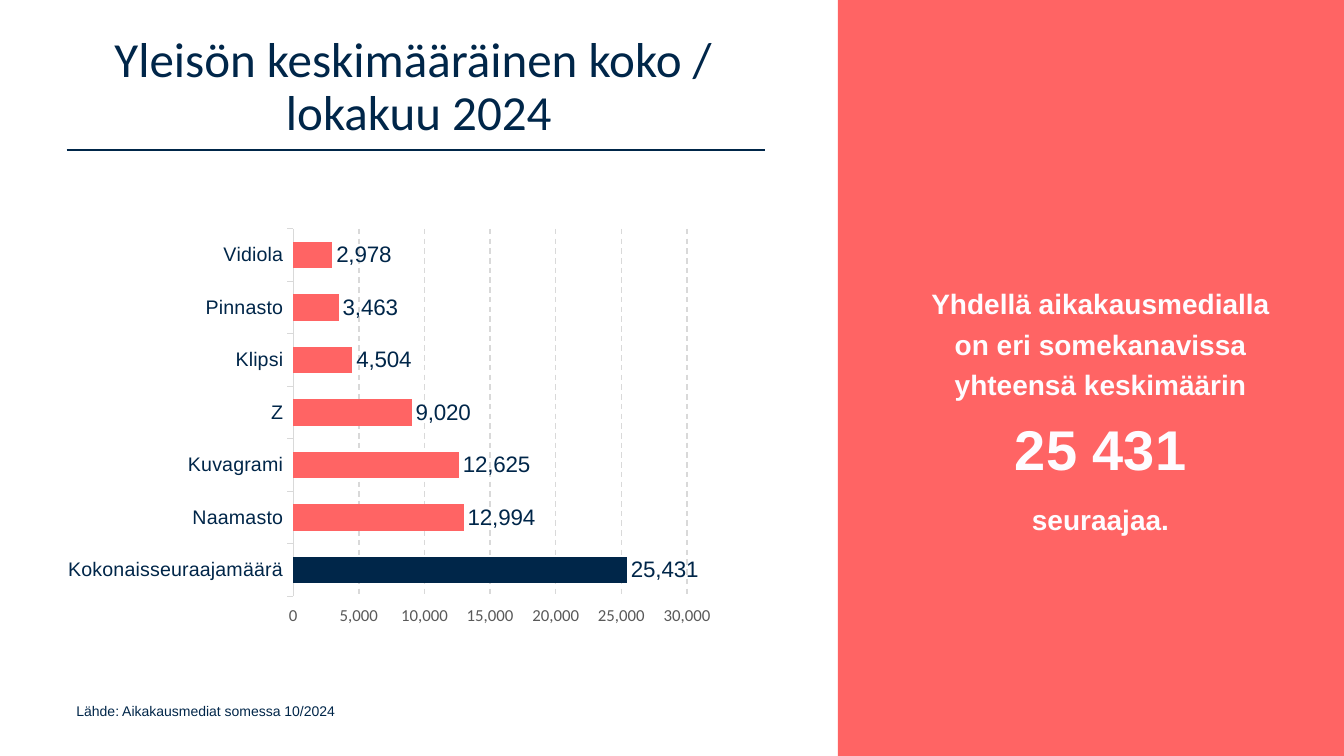
from lxml import etree
from pptx import Presentation
from pptx.chart.data import CategoryChartData
from pptx.dml.color import RGBColor
from pptx.enum.chart import XL_CHART_TYPE, XL_LABEL_POSITION, XL_TICK_MARK
from pptx.enum.dml import MSO_LINE
from pptx.enum.shapes import MSO_CONNECTOR, MSO_SHAPE
from pptx.enum.text import MSO_ANCHOR, PP_ALIGN
from pptx.oxml.ns import qn
from pptx.util import Inches, Pt

BAR = XL_CHART_TYPE.BAR_CLUSTERED
OUTSIDE_END = XL_LABEL_POSITION.OUTSIDE_END
TICK_OUT = XL_TICK_MARK.OUTSIDE
DASH = MSO_LINE.DASH
STRAIGHT = MSO_CONNECTOR.STRAIGHT
RECTANGLE = MSO_SHAPE.RECTANGLE
TOP, MIDDLE = MSO_ANCHOR.TOP, MSO_ANCHOR.MIDDLE
LEFT, CENTER = PP_ALIGN.LEFT, PP_ALIGN.CENTER

NAVY, CORAL, WHITE = "002649", "FF6464", "FEFCFF"
GRID, GREY = "D9D9D9", "595959"
HEADING, BODY = "Calibri", "Arial"
SPLIT = 8.31  # where the chart side meets the panel

AUDIENCE = {
    "Kokonaisseuraajamäärä": 25431,
    "Naamasto": 12994,
    "Kuvagrami": 12625,
    "Z": 9020,
    "Klipsi": 4504,
    "Pinnasto": 3463,
    "Vidiola": 2978,
}


def rgb(value):
    return RGBColor.from_string(value)


def apply(target, values):
    for name, value in values.items():
        setattr(target, name, value)


class AudienceSlide:
    def __init__(self, presentation):
        self.slide = presentation.slides.add_slide(presentation.slide_layouts[6])
        self.shapes = self.slide.shapes

    def style_font(self, font, name, size, color, bold=False):
        apply(font, {"name": name, "size": Pt(size), "bold": bold})
        font.color.rgb = rgb(color)

    def panel(self, box, color):
        panel = self.shapes.add_shape(RECTANGLE, *map(Inches, box))
        panel.shadow.inherit = False
        panel.fill.solid()
        panel.fill.fore_color.rgb = rgb(color)
        panel.line.fill.background()

    def rule(self, start, end, color):
        rule = self.shapes.add_connector(STRAIGHT, *map(Inches, start + end))
        rule.line.color.rgb = rgb(color)
        rule.line.width = Pt(1)
        etree.SubElement(rule.element.spPr, qn("a:effectLst"))

    def text(self, box, paragraphs, font, color, bold=False,
             anchor=MIDDLE, align=CENTER, spacing=1.0, gap=0):
        """Each paragraph is a list of lines, each line a (words, size) pair."""
        frame = self.shapes.add_textbox(*map(Inches, box)).text_frame
        apply(frame, {"word_wrap": True, "vertical_anchor": anchor})
        for index, lines in enumerate(paragraphs):
            paragraph = frame.add_paragraph() if index else frame.paragraphs[0]
            apply(paragraph, {"alignment": align, "line_spacing": spacing,
                              "space_before": Pt(gap if index else 0)})
            for number, (words, size) in enumerate(lines):
                if number:
                    paragraph.add_line_break()
                run = paragraph.add_run()
                run.text = words
                self.style_font(run.font, font, size, color, bold)

    def bar_chart(self, box, values, plot_area):
        data = CategoryChartData(number_format="#,##0")
        data.categories = list(values)
        data.add_series("Series 1", list(values.values()))
        chart = self.shapes.add_chart(BAR, *map(Inches, box), data).chart
        apply(chart, {"has_legend": False, "has_title": False})
        self.style_font(chart.font, HEADING, 10, "000000")
        self.axes(chart)
        self.bars(chart.plots[0])
        self.place_plot(chart, plot_area)

    def axes(self, chart):
        categories, scale = chart.category_axis, chart.value_axis
        apply(categories, {"major_tick_mark": TICK_OUT, "has_major_gridlines": False})
        self.style_font(categories.tick_labels.font, BODY, 14, NAVY)
        categories.format.line.color.rgb = rgb(GRID)
        categories.format.line.width = Pt(0.75)

        apply(scale, {"major_tick_mark": TICK_OUT, "has_major_gridlines": True,
                      "minimum_scale": 0, "maximum_scale": 30000, "major_unit": 5000})
        self.style_font(scale.tick_labels.font, HEADING, 12, GREY)
        apply(scale.tick_labels, {"number_format": "#,##0",
                                  "number_format_is_linked": False})
        scale.format.line.fill.background()
        grid = scale.major_gridlines.format.line
        grid.color.rgb = rgb(GRID)
        apply(grid, {"width": Pt(1), "dash_style": DASH})

    def bars(self, plot):
        apply(plot, {"gap_width": 100, "vary_by_categories": False,
                     "has_data_labels": True})
        apply(plot.data_labels, {"show_value": True, "position": OUTSIDE_END,
                                 "number_format": "#,##0",
                                 "number_format_is_linked": False})
        self.style_font(plot.data_labels.font, BODY, 16, NAVY)
        series = plot.series[0]
        series.invert_if_negative = False
        total = series.points[0]
        for part, color in ((series, CORAL), (total, NAVY)):
            part.format.fill.solid()
            part.format.fill.fore_color.rgb = rgb(color)

    def place_plot(self, chart, plot_area):
        area = chart.element.find(".//" + qn("c:plotArea"))
        layout = area.find(qn("c:layout"))
        if layout is None:
            layout = etree.Element(qn("c:layout"))
            area.insert(0, layout)
        manual = etree.SubElement(layout, qn("c:manualLayout"))
        settings = {"layoutTarget": "inner", "xMode": "edge", "yMode": "edge"}
        settings.update(zip("xywh", plot_area))
        for tag, value in settings.items():
            etree.SubElement(manual, qn("c:" + tag)).set("val", str(value))


def main():
    presentation = Presentation()
    apply(presentation, {"slide_width": Inches(13.33), "slide_height": Inches(7.5)})
    page = AudienceSlide(presentation)

    # Panel and rule under the title
    page.panel((SPLIT, 0, 5.02, 7.5), CORAL)
    page.rule((0.66, 1.49), (7.59, 1.49), NAVY)

    # Source line
    page.text((0.66, 6.92, 6.58, 0.44),
              [[("Lähde: Aikakausmediat somessa 10/2024", 10)]],
              BODY, NAVY, anchor=TOP, align=LEFT)

    # Title
    page.text((0, 0.25, SPLIT, 1.25),
              [[("Yleisön keskimääräinen koko / ", 35), ("lokakuu 2024", 35)]],
              HEADING, NAVY, spacing=0.9)

    # Key figure
    page.text((9.04, 1.5, 3.75, 5.1),
              [[("Yhdellä aikakausmedialla on eri somekanavissa "
                 "yhteensä keskimäärin", 20), ("25 431", 40)],
               [("seuraajaa.", 20)]],
              BODY, WHITE, bold=True, spacing=1.2, gap=10)

    # Audience by channel
    page.bar_chart((0, 1.88, SPLIT, 4.34), AUDIENCE, (0.35, 0.09, 0.47, 0.84))

    presentation.save("out.pptx")


if __name__ == "__main__":
    main()
